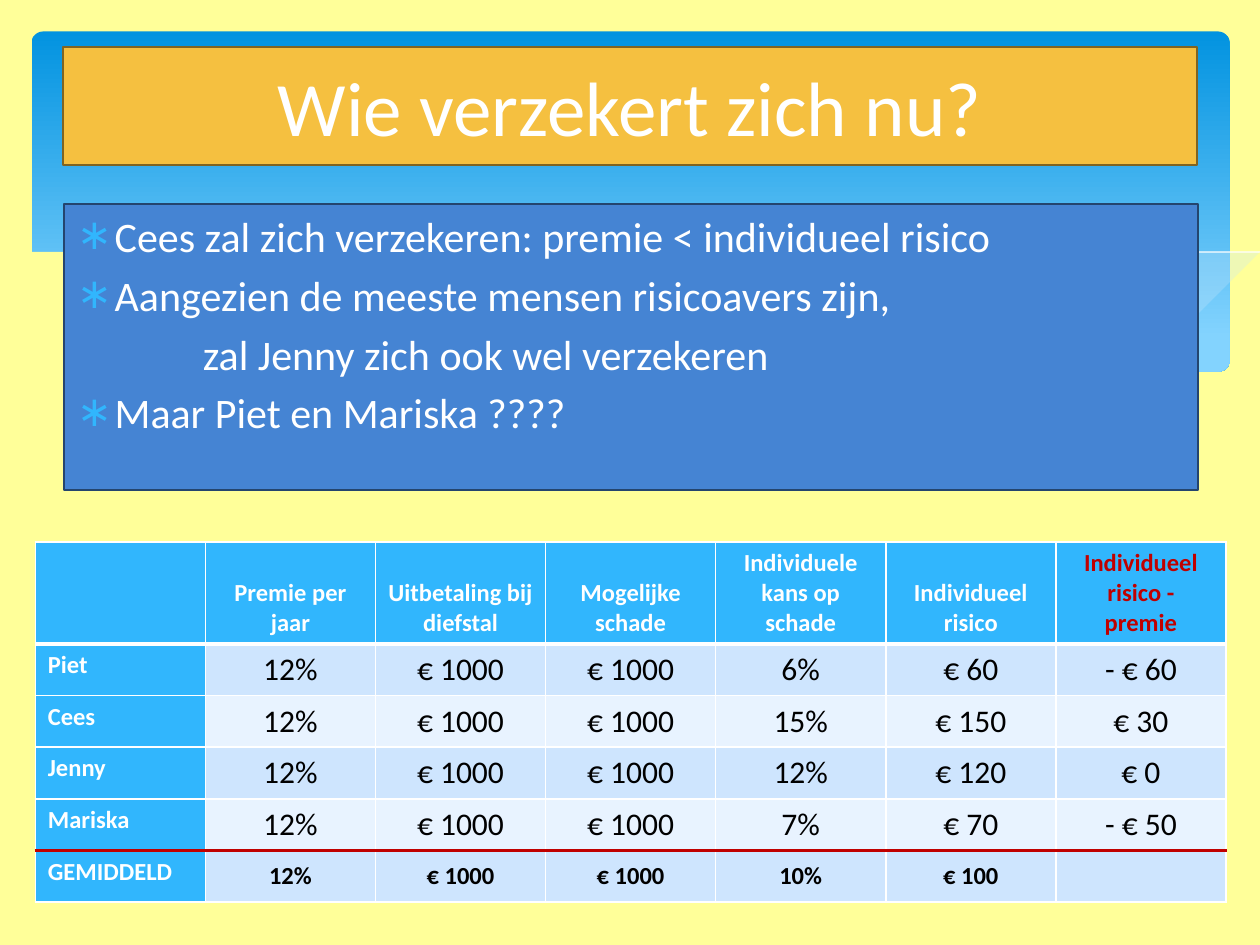
from lxml.etree import SubElement
from pptx import Presentation
from pptx.dml.color import RGBColor
from pptx.enum.shapes import MSO_SHAPE
from pptx.enum.text import MSO_ANCHOR, MSO_AUTO_SIZE, PP_ALIGN
from pptx.oxml.ns import qn
from pptx.util import Inches, Pt

FONT = "Calibri"
PAGE, WHITE, BLACK, RED = "FFFF99", "FFFFFF", "000000", "C00000"
SKY, BAND_DARK, BAND_LIGHT = "31B6FD", "CEE5FE", "E8F3FF"

SWOOSH = [(9.76, 2), (9.35, 2.07), (8.91, 2.16), (8.32, 2.3), (7.79, 2.42),
          (7.29, 2.53), (6.61, 2.65), (7.05, 2.71), (7.57, 2.76), (8.03, 2.78),
          (8.44, 2.77), (8.81, 2.73), (9.13, 2.67), (9.42, 2.59), (9.76, 2.47)]
CREST = [(6.13, 2.57), (6.53, 2.46), (6.95, 2.35), (7.48, 2.23), (8.06, 2.1),
         (8.66, 1.99), (9.1, 1.92), (9.51, 1.87), (9.75, 1.85)]
WAVE = [(9.77, 2.46), (9.59, 2.53), (9.4, 2.59), (9.2, 2.65), (8.99, 2.69),
        (8.63, 2.74), (8.09, 2.77), (7.61, 2.75), (7.08, 2.7), (6.48, 2.62),
        (5.79, 2.5), (5.03, 2.33), (4.47, 2.2), (3.91, 2.07), (3.4, 1.97),
        (2.92, 1.9), (2.5, 1.86), (2.11, 1.84), (1.77, 1.84), (1.46, 1.85),
        (1.19, 1.87), (0.95, 1.91), (0.76, 1.95), (0.59, 1.99), (0.46, 2.03),
        (0.36, 2.07), (0.23, 2.13), (0.23, 3.29), (9.77, 3.29)]

BULLETS = [
    ("Cees zal zich verzekeren: premie < individueel risico", True),
    ("Aangezien de meeste mensen risicoavers zijn,", True),
    ("zal Jenny zich ook wel verzekeren", False),
    ("Maar Piet en Mariska ????", True),
]
ROWS = [
    ["", "Premie per jaar", "Uitbetaling bij diefstal", "Mogelijke schade",
     "Individuele kans op schade", "Individueel risico", "Individueel risico - premie"],
    ["Piet", "12%", "€ 1000", "€ 1000", "6%", "€ 60", "- € 60"],
    ["Cees", "12%", "€ 1000", "€ 1000", "15%", "€ 150", "€ 30"],
    ["Jenny", "12%", "€ 1000", "€ 1000", "12%", "€ 120", "€ 0"],
    ["Mariska", "12%", "€ 1000", "€ 1000", "7%", "€ 70", "- € 50"],
    ["GEMIDDELD", "12%", "€ 1000", "€ 1000", "10%", "€ 100", ""],
]


def rgb(value):
    return RGBColor.from_string(value)


def paint(target, color):
    target.fill.solid()
    target.fill.fore_color.rgb = rgb(color)


def format_runs(paragraph, size, color, bold=False):
    for run in paragraph.runs:
        run.font.name, run.font.size, run.font.bold = FONT, Pt(size), bold
        run.font.color.rgb = rgb(color)


def add_outline(slide, points, closed=True):
    builder = slide.shapes.build_freeform(*points[0], scale=Inches(1))
    builder.add_line_segments(points[1:], close=closed)
    outline = builder.convert_to_shape()
    outline.shadow.inherit = False
    if closed:
        outline.line.fill.background()
    return outline


def add_backdrop(slide):
    sky = slide.shapes.add_shape(MSO_SHAPE.ROUNDED_RECTANGLE, Inches(0.25),
                                 Inches(0.25), Inches(9.51), Inches(2.7))
    sky.adjustments[0] = 0.034
    sky.shadow.inherit = False
    sky.line.fill.background()
    sky.fill.gradient()
    sky.fill.gradient_angle = 270
    for stop, position, color in zip(sky.fill.gradient_stops, (0, 0.9),
                                     ("0293E0", "83D3FE")):
        stop.position = position
        stop.color.rgb = rgb(color)

    swoosh = add_outline(slide, SWOOSH)
    paint(swoosh, "C6E7FC")
    tint = swoosh.fill._xPr.find(qn("a:solidFill"))[0]
    SubElement(tint, qn("a:alpha"), val="29000")

    crest = add_outline(slide, CREST, closed=False)
    crest.fill.background()
    crest.line.color.rgb = rgb(WHITE)
    crest.line.width = Pt(0)

    paint(add_outline(slide, WAVE), PAGE)


def place_panel(slide, panel, box, fill, border):
    """Put a placeholder in its box, in front of what is already drawn."""
    panel.left, panel.top, panel.width, panel.height = map(Inches, box)
    paint(panel, fill)
    panel.line.color.rgb = rgb(border)
    panel.line.width = Pt(1.25)
    panel.text_frame.auto_size = MSO_AUTO_SIZE.NONE
    slide.shapes._spTree.append(panel._element)


def set_bullet(paragraph, bulleted):
    props = paragraph._p.get_or_add_pPr()
    margin, indent = (0.3, -0.3) if bulleted else (1, 0)
    props.set("marL", str(Inches(margin)))
    props.set("indent", str(Inches(indent)))
    if bulleted:
        color = SubElement(props, qn("a:buClr"))
        SubElement(color, qn("a:srgbClr"), val=SKY)
        SubElement(props, qn("a:buFont"), typeface=FONT)
        SubElement(props, qn("a:buChar"), char="∗")
    else:
        SubElement(props, qn("a:buNone"))


def fill_title(slide):
    title = slide.shapes.title
    place_panel(slide, title, (0.5, 0.37, 9, 0.94), "F5C040", "806421")
    title.text_frame.text = "Wie verzekert zich nu?"
    title.text_frame.vertical_anchor = MSO_ANCHOR.MIDDLE
    heading = title.text_frame.paragraphs[0]
    heading.alignment = PP_ALIGN.CENTER
    format_runs(heading, 44, WHITE)


def fill_body(slide):
    body = slide.placeholders[1]
    place_panel(slide, body, (0.51, 1.62, 9, 2.27), "4584D3", "24456E")
    body.text_frame.text = "\n".join(text for text, _ in BULLETS)
    for paragraph, (_, bulleted) in zip(body.text_frame.paragraphs, BULLETS):
        set_bullet(paragraph, bulleted)
        format_runs(paragraph, 24, WHITE)


def set_borders(cell, top, bottom):
    """Draw white sides; top and bottom are (colour, points)."""
    side = (WHITE, 1)
    props = cell._tc.get_or_add_tcPr()
    for tag, (color, width) in zip(("lnL", "lnR", "lnT", "lnB"),
                                   (side, side, top, bottom)):
        edge = SubElement(props, qn(f"a:{tag}"), w=str(Pt(width)))
        SubElement(SubElement(edge, qn("a:solidFill")), qn("a:srgbClr"), val=color)


def format_cell(cell, row, col):
    last_row, last_col = len(ROWS) - 1, len(ROWS[0]) - 1
    paragraph = cell.text_frame.paragraphs[0]
    if row and col:
        average = row == last_row
        paint(cell, BAND_DARK if row % 2 else BAND_LIGHT)
        format_runs(paragraph, 14 if average else 18, BLACK, bold=average)
        cell.vertical_anchor = MSO_ANCHOR.MIDDLE
    else:
        paint(cell, SKY)
        format_runs(paragraph, 14, RED if col == last_col else WHITE, bold=True)
        cell.vertical_anchor = MSO_ANCHOR.TOP if row else MSO_ANCHOR.BOTTOM
    paragraph.alignment = PP_ALIGN.CENTER if col else PP_ALIGN.LEFT


def add_risk_table(slide):
    table = slide.shapes.add_table(len(ROWS), len(ROWS[0]), Inches(0.28),
                                   Inches(4.3), Inches(9.45), Inches(2.83)).table
    for column in table.columns:
        column.width = Inches(1.35)
    rules = [(WHITE, 1), (WHITE, 3), (WHITE, 1), (WHITE, 1), (WHITE, 1),
             (RED, 2.25), (WHITE, 1)]
    for r, texts in enumerate(ROWS):
        table.rows[r].height = Inches(0.41 if r else 0.8)
        for c, text in enumerate(texts):
            cell = table.cell(r, c)
            cell.text_frame.text = text
            set_borders(cell, rules[r], rules[r + 1])
            format_cell(cell, r, c)


def main():
    deck = Presentation()
    deck.slide_width, deck.slide_height = Inches(10), Inches(7.5)
    slide = deck.slides.add_slide(deck.slide_layouts[1])
    paint(slide.background, PAGE)
    add_backdrop(slide)
    fill_body(slide)
    fill_title(slide)
    add_risk_table(slide)
    deck.save("out.pptx")


if __name__ == "__main__":
    main()
